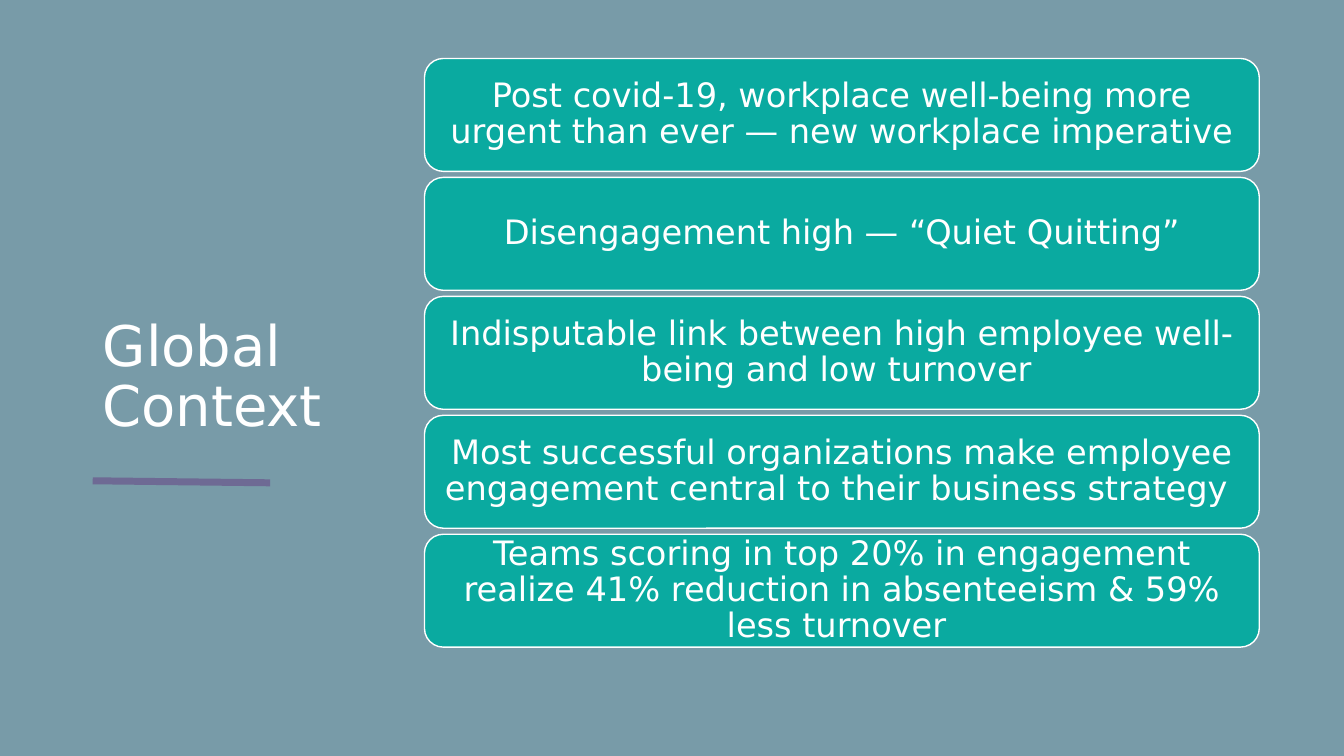
from lxml import etree
from pptx import Presentation
from pptx.dml.color import RGBColor
from pptx.enum.shapes import MSO_CONNECTOR, MSO_SHAPE
from pptx.enum.text import MSO_ANCHOR, PP_ALIGN
from pptx.oxml.ns import qn
from pptx.util import Inches, Pt

ROUND = MSO_SHAPE.ROUNDED_RECTANGLE
LINE = MSO_CONNECTOR.STRAIGHT
MIDDLE = MSO_ANCHOR.MIDDLE
LEFT, CENTER = PP_ALIGN.LEFT, PP_ALIGN.CENTER
FONT = "DejaVu Sans"
WHITE, TEAL, PURPLE, SLATE = "FFFFFF", "0AAAA0", "6E6A94", "789BA8"


def paint(target, tint):
    target.solid()
    target.fore_color.rgb = RGBColor.from_string(tint)


def write(shape, words, size, align):
    frame = shape.text_frame
    frame.word_wrap = True
    frame.vertical_anchor = MIDDLE
    frame.margin_top = frame.margin_bottom = 0
    frame.text = words
    para = frame.paragraphs[0]
    para.alignment = align
    para.line_spacing = 0.9
    font = para.runs[0].font
    font.name = FONT
    font.size = Pt(size)
    paint(font.fill, WHITE)


deck = Presentation()
deck.slide_width, deck.slide_height = Inches(13.33), Inches(7.5)
slide = deck.slides.add_slide(deck.slide_layouts[6])
paint(slide.background.fill, SLATE)

edge = Inches(0.92)
title = slide.shapes.add_textbox(edge, Inches(3.03), Inches(3), Inches(1.45))
write(title, "Global Context", 40, LEFT)

points = [
    "Post covid-19, workplace well-being more urgent than ever — new workplace imperative",
    "Disengagement high — “Quiet Quitting”",
    "Indisputable link between high employee well-being and low turnover ",
    "Most successful organizations make employee engagement central to their business strategy ",
    "Teams scoring in top 20% in engagement realize 41% reduction in absenteeism & 59% less turnover ",
]
left, top, wide, high = Inches(4.21), Inches(0.58), Inches(8.28), Inches(1.12)
gap = Inches(0.06)
for row, point in enumerate(points):
    card = slide.shapes.add_shape(ROUND, left, top + row * (high + gap), wide, high)
    card.shadow.inherit = False
    paint(card.fill, TEAL)
    paint(card.line.fill, WHITE)
    card.line.width = Pt(1)
    write(card, point, 24, CENTER)

rule = slide.shapes.add_connector(LINE, edge, Inches(4.77), Inches(2.68), Inches(4.79))
paint(rule.line.fill, PURPLE)
rule.line.width = Pt(5)
etree.SubElement(rule._element.spPr, qn("a:effectLst"))

deck.save("out.pptx")
